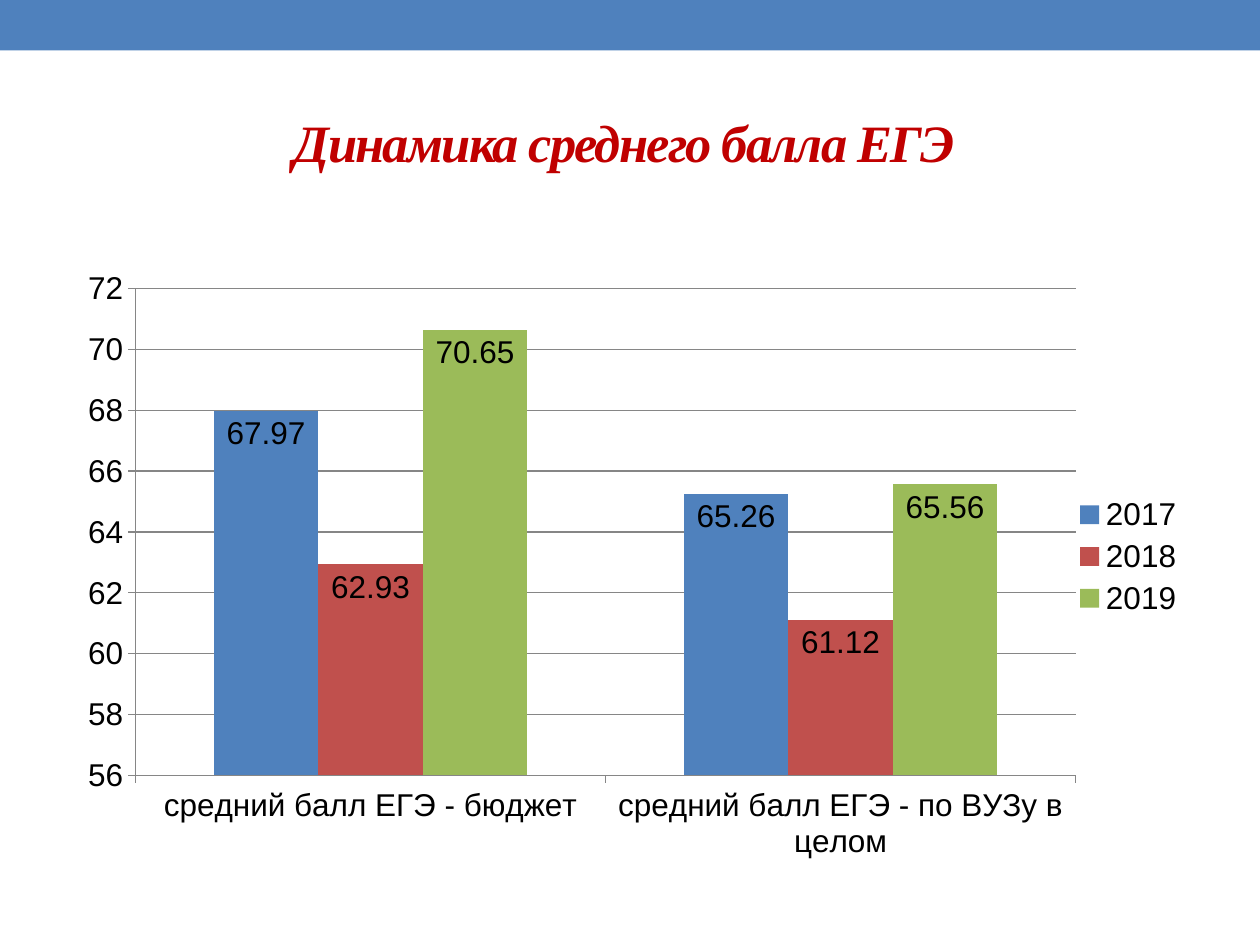
import lxml.etree
import pptx
import pptx.chart.data
import pptx.dml.color
import pptx.enum.chart
import pptx.enum.shapes
import pptx.enum.text
import pptx.oxml.ns
import pptx.util
from pptx.util import Cm

CATEGORIES = ["средний балл ЕГЭ - бюджет", "средний балл ЕГЭ - по ВУЗу в целом"]
SCORES = {
    "2017": ([67.97, 65.26], "4F81BD"),
    "2018": ([62.93, 61.12], "C0504D"),
    "2019": ([70.65, 65.56], "9BBB59"),
}
PLOT_AREA = {"x": 0.064, "y": 0.101, "w": 0.829, "h": 0.725}
GREY = "868686"


def paint(color_holder, color):
    """Set a hex colour on a fill, a line's fill or a font."""
    if hasattr(color_holder, "solid"):
        color_holder.solid()
        color_holder.fore_color.rgb = pptx.dml.color.RGBColor.from_string(color)
    else:
        color_holder.color.rgb = pptx.dml.color.RGBColor.from_string(color)


def add_text(slide, text, box, *, font, size, color, bold=False, italic=False, spacing=0):
    frame = slide.shapes.add_textbox(*box).text_frame
    frame.word_wrap = True
    frame.vertical_anchor = pptx.enum.text.MSO_ANCHOR.MIDDLE
    paragraph = frame.paragraphs[0]
    paragraph.alignment = pptx.enum.text.PP_ALIGN.CENTER
    run = paragraph.add_run()
    run.text = text
    run.font.name = font
    run.font.size = pptx.util.Pt(size)
    run.font.bold = bold
    run.font.italic = italic
    paint(run.font, color)
    run.font._element.set("spc", str(spacing * 100))


def add_header(slide, left, top, width, height):
    # Band across the top
    band = slide.shapes.add_shape(
        pptx.enum.shapes.MSO_SHAPE.RECTANGLE, left, top, width, Cm(1.02))
    band.shadow.inherit = False
    paint(band.fill, "4F81BD")
    band.line.fill.background()

    # Title
    margin, title_top = Cm(1.27), Cm(1.47)
    title_box = (left + margin, top + title_top, width - 2 * margin, height - title_top)
    add_text(slide, "Динамика среднего балла ЕГЭ ", title_box, font="Times New Roman",
             size=30, color="C00000", bold=True, italic=True, spacing=-1)


def fix_plot_area(chart):
    """Place the inner plot area by fractions of the chart's box."""
    qn = pptx.oxml.ns.qn
    plot_area = chart._chartSpace.find(".//" + qn("c:plotArea"))
    for old_layout in plot_area.findall(qn("c:layout")):
        plot_area.remove(old_layout)
    layout = lxml.etree.Element(qn("c:layout"))
    manual = lxml.etree.SubElement(layout, qn("c:manualLayout"))
    settings = {"layoutTarget": "inner", "xMode": "edge", "yMode": "edge", **PLOT_AREA}
    for tag, value in settings.items():
        lxml.etree.SubElement(manual, qn("c:" + tag)).set("val", str(value))
    plot_area.insert(0, layout)


def add_score_chart(slide, left, top, width, height):
    scores = pptx.chart.data.CategoryChartData()
    scores.categories = CATEGORIES
    for year, (values, _) in SCORES.items():
        scores.add_series(year, values)
    chart = slide.shapes.add_chart(
        pptx.enum.chart.XL_CHART_TYPE.COLUMN_CLUSTERED, left, top, width, height, scores).chart
    chart.has_title = False
    chart.font.name = "Arial"
    chart.font.size = pptx.util.Pt(18)
    paint(chart.font, "000000")
    fix_plot_area(chart)

    # Columns and their values
    columns = chart.plots[0]
    columns.gap_width = 150
    columns.overlap = 0
    columns.vary_by_categories = False
    for series, (_, color) in zip(columns.series, SCORES.values()):
        paint(series.format.fill, color)
        series.data_labels.show_value = True
        series.data_labels.position = pptx.enum.chart.XL_LABEL_POSITION.INSIDE_END

    # Axes and grid
    score_axis = chart.value_axis
    score_axis.minimum_scale, score_axis.maximum_scale = 56, 72
    score_axis.major_unit = 2
    score_axis.has_major_gridlines = True
    for axis in (chart.category_axis, score_axis):
        axis.major_tick_mark = pptx.enum.chart.XL_TICK_MARK.OUTSIDE
    for ruled in (chart.category_axis, score_axis, score_axis.major_gridlines):
        paint(ruled.format.line.fill, GREY)
        ruled.format.line.width = pptx.util.Pt(0.75)

    # Legend
    chart.has_legend = True
    chart.legend.position = pptx.enum.chart.XL_LEGEND_POSITION.RIGHT
    chart.legend.include_in_layout = False


def main():
    presentation = pptx.Presentation()
    presentation.slide_width, presentation.slide_height = Cm(25.4), Cm(19.05)
    slide = presentation.slides.add_slide(presentation.slide_layouts[6])
    add_header(slide, Cm(0), Cm(0), presentation.slide_width, Cm(4.22))
    add_score_chart(slide, Cm(1.27), Cm(4.45), Cm(22.86), Cm(13.54))
    presentation.save("out.pptx")


if __name__ == "__main__":
    main()
